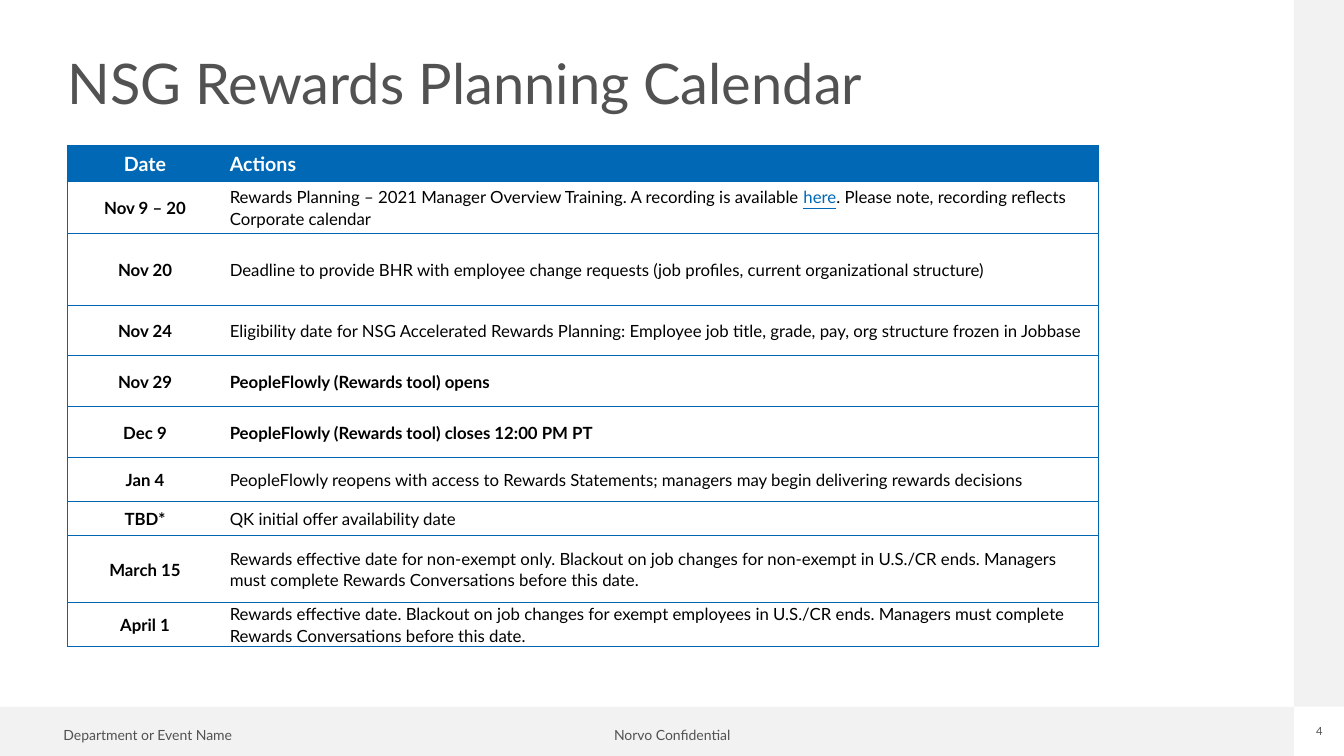
from dataclasses import dataclass

from lxml import etree
from pptx import Presentation
from pptx import util as u
from pptx.dml import color as dml
from pptx.enum import shapes, text
from pptx.oxml import ns


@dataclass(frozen=True)
class Theme:
    font: str = "Lato"
    grey: str = "525252"
    band: str = "F2F2F2"
    blue: str = "0068B5"
    line: str = "0066B1"
    black: str = "000000"
    white: str = "FFFFFF"
    title: float = 40
    head: float = 14
    body: float = 12
    foot: float = 10
    page: float = 8


@dataclass(frozen=True)
class Run:
    words: str
    size: float
    color: str
    bold: bool = False
    under: bool = False


@dataclass(frozen=True)
class Box:
    left: float
    top: float
    width: float
    height: float

    def emu(self) -> tuple:
        return tuple(u.Cm(n) for n in (self.left, self.top, self.width, self.height))


@dataclass(frozen=True)
class Note:
    box: Box
    run: Run
    inset: float
    align: text.PP_ALIGN


@dataclass(frozen=True)
class Event:
    date: str
    action: tuple
    height: float


T = Theme()
LEFT, MID = text.PP_ALIGN.LEFT, text.PP_ALIGN.CENTER


def plain(words: str) -> Run:
    return Run(words, T.body, T.black)


def strong(words: str) -> Run:
    return Run(words, T.body, T.black, True)


def head(words: str) -> Run:
    return Run(words, T.head, T.white, True)


# Content
BANDS = (Box(0, 17.81, 32.61, 1.24), Box(32.61, 0, 1.26, 17.81))
NOTES = (
    Note(Box(14.69, 18.24, 4.5, 0.63), Run("Norvo Confidential", T.foot, T.grey), 0.25, MID),
    Note(Box(1.35, 18.24, 4.9, 0.63), Run("Department or Event Name", T.foot, T.grey), 0.25, LEFT),
    Note(Box(33.07, 18.29, 0.36, 0.33), Run("4", T.page, T.grey), 0, MID),
)
EVENTS = (
    Event("Nov 9 – 20", (
        plain("Rewards Planning – 2021 Manager Overview Training. A recording is available "),
        Run("here", T.body, T.blue, under=True),
        plain(". Please note, recording reflects Corporate calendar")), 1.31),
    Event("Nov 20", (plain(
        "Deadline to provide BHR with employee change requests "
        "(job profiles, current organizational structure)"),), 1.81),
    Event("Nov 24", (plain(
        "Eligibility date for NSG Accelerated Rewards Planning: "
        "Employee job title, grade, pay, org structure frozen in Jobbase"),), 1.27),
    Event("Nov 29", (strong("PeopleFlowly (Rewards tool) opens"),), 1.28),
    Event("Dec 9", (strong("PeopleFlowly (Rewards tool) closes 12:00 PM PT"),), 1.28),
    Event("Jan 4", (plain(
        "PeopleFlowly reopens with access to Rewards Statements; "
        "managers may begin delivering rewards decisions"),), 1.11),
    Event("TBD*", (plain("QK initial offer availability date"),), 0.86),
    Event("March 15", (plain(
        "Rewards effective date for non-exempt only. Blackout on job changes for non-exempt "
        "in U.S./CR ends. Managers must complete Rewards Conversations before this date."),), 1.69),
    Event("April 1", (plain(
        "Rewards effective date. Blackout on job changes for exempt employees in U.S./CR ends. "
        "Managers must complete Rewards Conversations before this date."),), 1.11),
)
COLS = (3.91, 22.07)
HEAD = 0.91


def paint(fill, color: str) -> None:
    fill.solid()
    fill.fore_color.rgb = dml.RGBColor.from_string(color)


def write(para, runs: tuple, align, space: float) -> None:
    para.alignment = align
    para.line_spacing = space
    for item in runs:
        run = para.add_run()
        run.text = item.words
        font = run.font
        font.name, font.size = T.font, u.Pt(item.size)
        font.bold, font.underline = item.bold, item.under
        font.color.rgb = dml.RGBColor.from_string(item.color)


def inset(frame, size: float) -> None:
    frame.margin_left = frame.margin_right = u.Cm(size)
    frame.margin_top = frame.margin_bottom = u.Cm(size / 2)


def edge(cell, sides: str) -> None:
    props = cell._tc.get_or_add_tcPr()
    for side in "LRTB":
        line = etree.SubElement(props, ns.qn(f"a:ln{side}"), w=str(u.Pt(0.75)))
        if side in sides:
            fill = etree.SubElement(line, ns.qn("a:solidFill"))
            etree.SubElement(fill, ns.qn("a:srgbClr"), val=T.line)
        else:
            etree.SubElement(line, ns.qn("a:noFill"))


def fill_cell(cell, runs: tuple, first: bool, top: bool) -> None:
    edge(cell, "LTB" if first else "RTB")
    if top:
        paint(cell.fill, T.blue)
    else:
        cell.fill.background()
    cell.margin_left = cell.margin_right = u.Cm(0.18)
    cell.margin_top = cell.margin_bottom = 0
    cell.vertical_anchor = text.MSO_ANCHOR.MIDDLE
    write(cell.text_frame.paragraphs[0], runs, MID if first else LEFT, 1.07)


def add_band(slide, box: Box) -> None:
    band = slide.shapes.add_shape(shapes.MSO_SHAPE.RECTANGLE, *box.emu())
    band.shadow.inherit = False
    paint(band.fill, T.band)
    band.line.fill.background()


def add_note(slide, note: Note) -> None:
    frame = slide.shapes.add_textbox(*note.box.emu()).text_frame
    frame.word_wrap = False
    inset(frame, note.inset)
    write(frame.paragraphs[0], (note.run,), note.align, 0.9)


def add_title(slide, words: str) -> None:
    title = slide.shapes.title
    title.left, title.top, title.width, title.height = Box(1.7, 1.42, 30.58, 2.64).emu()
    frame = title.text_frame
    inset(frame, 0)
    frame.vertical_anchor = text.MSO_ANCHOR.TOP
    frame.auto_size = text.MSO_AUTO_SIZE.NONE
    write(frame.paragraphs[0], (Run(words, T.title, T.grey),), LEFT, 0.9)


def add_dates(slide) -> None:
    rows = [((head("Date"),), (head("Actions"),), HEAD)]
    rows += [((strong(e.date),), e.action, e.height) for e in EVENTS]
    box = Box(1.7, 3.66, sum(COLS), sum(row[2] for row in rows))
    table = slide.shapes.add_table(len(rows), len(COLS), *box.emu()).table
    table.horz_banding = False
    for col, width in zip(table.columns, COLS):
        col.width = u.Cm(width)
    for i, (date, action, height) in enumerate(rows):
        table.rows[i].height = u.Cm(height)
        fill_cell(table.cell(i, 0), date, True, i == 0)
        fill_cell(table.cell(i, 1), action, False, i == 0)


def main() -> None:
    deck = Presentation()
    deck.slide_width, deck.slide_height = u.Cm(33.87), u.Cm(19.05)
    slide = deck.slides.add_slide(deck.slide_layouts[5])
    # Frame and footer
    for box in BANDS:
        add_band(slide, box)
    for note in NOTES:
        add_note(slide, note)
    # Title and calendar
    add_title(slide, "NSG Rewards Planning Calendar")
    add_dates(slide)
    deck.save("out.pptx")


if __name__ == "__main__":
    main()
